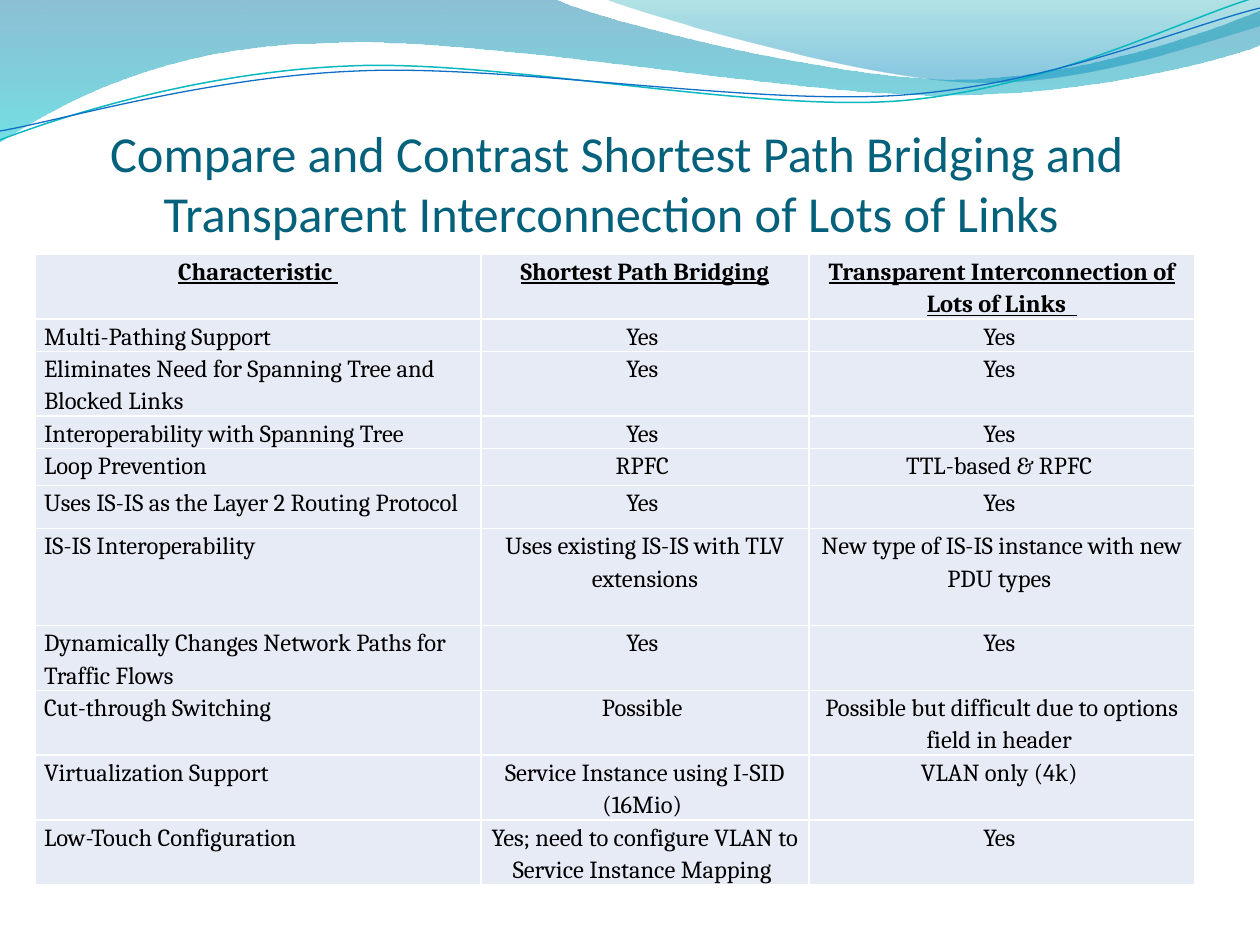
import math

import pptx
import pptx.dml.color
import pptx.enum.text
import pptx.oxml.ns
import pptx.util
from lxml import etree

EMU_PER_PX = 914400 / 126
CENTER = pptx.enum.text.PP_ALIGN.CENTER
LEFT = pptx.enum.text.PP_ALIGN.LEFT

# Each outline is a start point and segments: two numbers for a line, six for a curve.
BACK_WAVE = [(0, 0), (554, -1), (600, 21, 837, 79, 955, 79), (1075, 79, 1207, 33, 1260, 11),
             (1261, 45), (1239, 55, 1096, 96, 940, 95), (784, 95, 481, 35, 324, 43),
             (163, 45, 58, 105, -1, 142), (0, 0)]
FRONT_WAVE = [(604, -1), (641, 14, 859, 78, 969, 82), (1079, 87, 1211, 40, 1260, 26),
              (1260, 0), (604, -1)]
TEAL_LINE = [(0, 140), (60, 117, 199, 72, 349, 66), (498, 59, 747, 112, 898, 101),
             (1050, 89, 1182, 19, 1257, -3)]
BLUE_LINE = [(0, 131), (59, 121, 207, 77, 357, 71), (508, 64, 752, 106, 903, 95),
             (1053, 84, 1186, 26, 1260, 8)]
LINE_ROTATION = 357.3

TITLE = ("Compare and Contrast Shortest Path Bridging and "
         "Transparent Interconnection of Lots of Links ")
COLUMN_WIDTHS = [446, 328, 386]
ROWS = [
    (43, "Characteristic ", "Shortest Path Bridging",
     "Transparent Interconnection of Lots of Links  "),
    (32, "Multi-Pathing Support", "Yes ", "Yes "),
    (64, "Eliminates Need for Spanning Tree and Blocked Links", "Yes ", "Yes "),
    (32, "Interoperability with Spanning Tree", "Yes ", "Yes "),
    (37, "Loop Prevention", "RPFC ", "TTL-based & RPFC "),
    (43, "Uses IS-IS as the Layer 2 Routing Protocol", "Yes ", "Yes "),
    (97, "IS-IS Interoperability", "Uses existing IS-IS with TLV extensions",
     "New type of IS-IS instance with new PDU types "),
    (64, "Dynamically Changes Network Paths for Traffic Flows", "Yes ", "Yes "),
    (64, "Cut-through Switching", "Possible ",
     "Possible but difficult due to options field in header "),
    (64, "Virtualization Support", "Service Instance using I-SID (16Mio) ",
     "VLAN only (4k) "),
    (64, "Low-Touch Configuration",
     "Yes; need to configure VLAN to Service Instance Mapping ", "Yes "),
]


def px(length):
    return pptx.util.Emu(round(length * EMU_PER_PX))


def color(hex_string):
    return pptx.dml.color.RGBColor.from_string(hex_string)


def set_font(font, name, size, hex_string):
    font.name = name
    font.size = pptx.util.Pt(size)
    font.color.rgb = color(hex_string)


def add_element(parent, tag, **attributes):
    element = etree.SubElement(parent, pptx.oxml.ns.qn(tag))
    for name, value in attributes.items():
        element.set(name, str(value))
    return element


def unrotate(point, box, rotation):
    """Give the place in the box from which rotation brings a point to its spot."""
    left, top, width, height = box
    x, y = point[0] - left - width / 2, point[1] - top - height / 2
    angle = math.radians(-rotation)
    return (width / 2 + x * math.cos(angle) - y * math.sin(angle),
            height / 2 + x * math.sin(angle) + y * math.cos(angle))


def add_outline(slide, box, outline, rotation=0):
    """Add a freeform whose segments are true curves."""
    left, top, width, height = map(px, box)
    builder = slide.shapes.build_freeform(left, top)
    builder.add_line_segments([(left + width, top + height)], close=False)
    shape = builder.convert_to_shape()
    shape.shadow.inherit = False
    shape.rotation = rotation
    curve = next(shape._element.iter(pptx.oxml.ns.qn("a:path")))
    for child in list(curve):
        curve.remove(child)
    for index, segment in enumerate(outline):
        tag = "a:moveTo" if index == 0 else "a:lnTo" if len(segment) == 2 else "a:cubicBezTo"
        command = add_element(curve, tag)
        for point in zip(segment[::2], segment[1::2]):
            x, y = unrotate(point, box, rotation)
            add_element(command, "a:pt", x=px(x), y=px(y))
    if outline[0] == outline[-1]:
        curve.remove(curve[-1])
        add_element(curve, "a:close")
    return shape


def add_wave(slide, box, outline, stops):
    """Add a filled wave; stops are (position, colour, opacity percent)."""
    shape = add_outline(slide, box, outline)
    shape.line.fill.background()
    shape.fill.gradient()
    shape.fill.gradient_angle = 270
    elements = shape._element.iter(pptx.oxml.ns.qn("a:gs"))
    for stop, element, (position, hex_string, opacity) in zip(
            shape.fill.gradient_stops, elements, stops):
        stop.position = position
        stop.color.rgb = color(hex_string)
        add_element(element[0], "a:alpha", val=opacity * 1000)


def add_wave_line(slide, box, outline, hex_string, width):
    shape = add_outline(slide, box, outline, LINE_ROTATION)
    shape.fill.background()
    shape.line.color.rgb = color(hex_string)
    shape.line.width = pptx.util.Pt(width)


def add_header_waves(slide, box):
    left, top, width, height = box
    add_wave(slide, box, BACK_WAVE, [(0, "0074A1", 45), (1, "00C6CF", 55)])
    add_wave(slide, (left + 605, top, width - 606, 88), FRONT_WAVE,
             [(0, "00A1A9", 30), (0.8, "008BBF", 45)])
    add_wave_line(slide, (left - 2, top + 29, width, 89), TEAL_LINE, "0AB8BF", 0.85)
    add_wave_line(slide, (left - 2, top + 39, width + 1, 73), BLUE_LINE, "0F6FC6", 0.75)


def place_title(slide, box):
    title = slide.shapes.title
    title.left, title.top, title.width, title.height = map(px, box)
    frame = title.text_frame
    frame.text = TITLE
    frame.word_wrap = True
    frame.auto_size = pptx.enum.text.MSO_AUTO_SIZE.NONE
    frame.vertical_anchor = pptx.enum.text.MSO_ANCHOR.BOTTOM
    frame.margin_left = frame.margin_right = frame.margin_bottom = 0
    frame.margin_top = px(6)
    paragraph = frame.paragraphs[0]
    paragraph.alignment = CENTER
    set_font(paragraph.font, "Calibri", 28.8, "04617B")


def format_cell(cell, text, is_header, alignment):
    cell.margin_left = cell.margin_right = px(9)
    cell.margin_top = cell.margin_bottom = 0
    cell.fill.solid()
    cell.fill.fore_color.rgb = color("E7EBF5")
    cell.text = text
    paragraph = cell.text_frame.paragraphs[0]
    paragraph.alignment = alignment
    paragraph.line_spacing = 1.15
    paragraph.space_after = pptx.util.Pt(0 if is_header else 3)
    set_font(paragraph.font, "Cambria", 14, "000000")
    paragraph.font.bold = paragraph.font.underline = is_header


def add_comparison_table(slide, box):
    frame = slide.shapes.add_table(len(ROWS), len(COLUMN_WIDTHS), *map(px, box))
    table = frame.table
    table.first_row = table.horz_banding = False
    for column, width in zip(table.columns, COLUMN_WIDTHS):
        column.width = px(width)
    for row_index, (height, *texts) in enumerate(ROWS):
        table.rows[row_index].height = px(height)
        for column_index, text in enumerate(texts):
            is_header = row_index == 0
            alignment = CENTER if is_header or column_index else LEFT
            format_cell(table.cell(row_index, column_index), text, is_header, alignment)
    frame.height = px(box[3])


def main():
    presentation = pptx.Presentation()
    presentation.slide_width, presentation.slide_height = px(1260), px(945)
    slide = presentation.slides.add_slide(presentation.slide_layouts[5])
    add_header_waves(slide, (-1, -1, 1262, 143))
    place_title(slide, (45, 165, 1144, 78))
    add_comparison_table(slide, (35, 254, sum(COLUMN_WIDTHS), 677))
    presentation.save("out.pptx")


if __name__ == "__main__":
    main()
